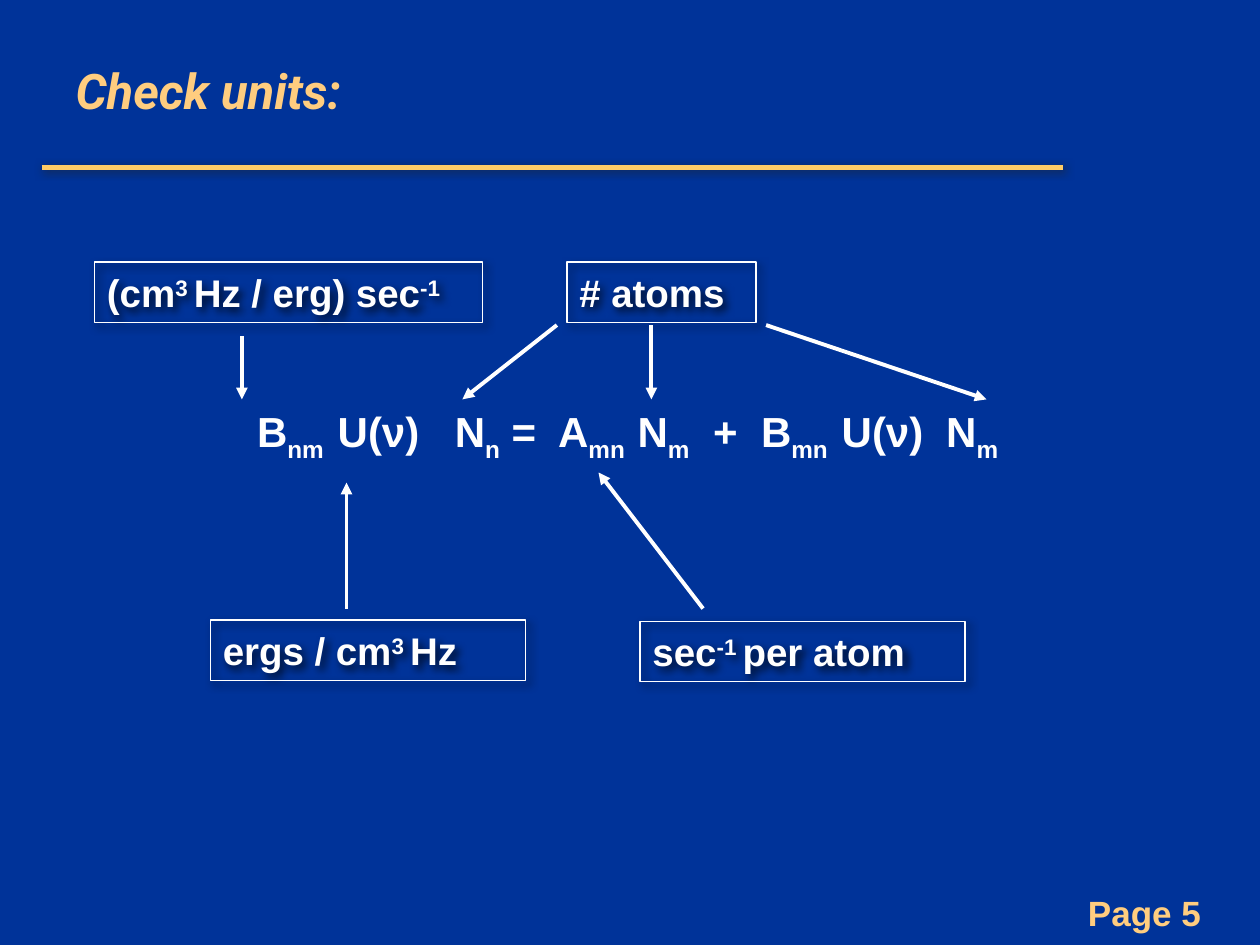
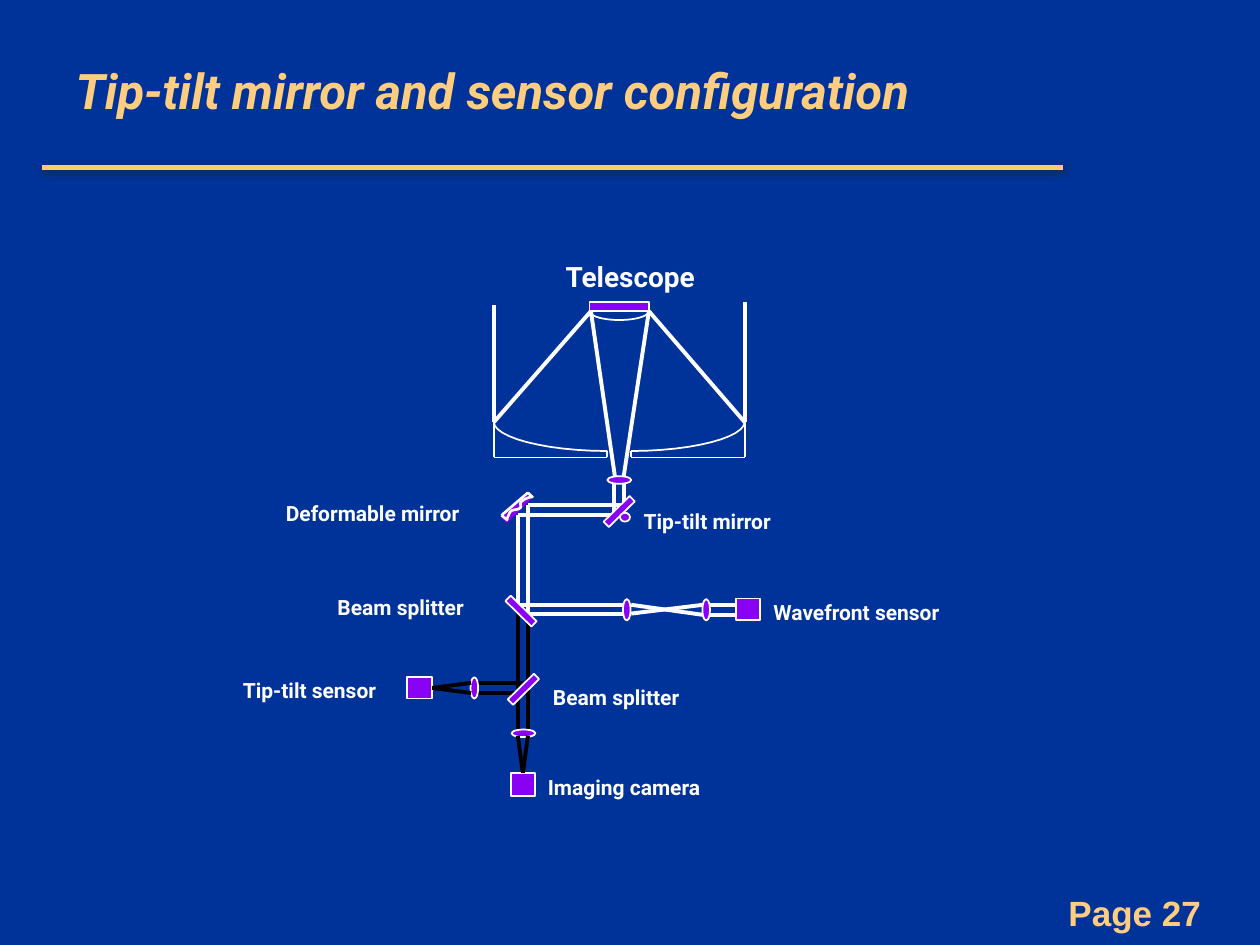
from itertools import pairwise

from lxml.etree import SubElement
from pptx import Presentation
from pptx.dml.color import RGBColor
from pptx.enum.shapes import MSO_CONNECTOR, MSO_SHAPE
from pptx.enum.text import MSO_ANCHOR, PP_ALIGN
from pptx.oxml.ns import qn
from pptx.util import Inches, Pt

COLUMNS, ROWS = 100, 75
COLORS = {
    "background": "003399",
    "rule": "FFCC66",
    "accent": "FFCD7F",
    "white": "FFFFFF",
    "black": "000000",
    "optic": "8901F3",
    "rule_shadow": "232323",
}
SUPERSCRIPT, SUBSCRIPT = 30000, -25000


def color(name):
    """Return the named colour."""
    return RGBColor.from_string(COLORS[name])


def bezier(start, first, second, end, steps=12):
    """Return points along a cubic curve."""
    def blend(a, b, c, d, t):
        """Mix four coordinates at position t."""
        s = 1 - t
        return s**3 * a + 3 * s**2 * t * b + 3 * s * t**2 * c + t**3 * d

    return [
        tuple(blend(*axis, step / steps) for axis in zip(start, first, second, end))
        for step in range(steps + 1)
    ]


class Deck:
    """Draws styled elements on the current slide, placed in grid units."""

    def __init__(self):
        """Start an empty presentation with a shared background."""
        self.presentation = Presentation()
        self.presentation.slide_width = Inches(10)
        self.presentation.slide_height = Inches(7.5)
        fill = self.presentation.slide_master.background.fill
        fill.solid()
        fill.fore_color.rgb = color("background")
        self.slide = None

    def place(self, *lengths):
        """Turn alternating columns and rows into slide lengths."""
        units = (
            self.presentation.slide_width / COLUMNS,
            self.presentation.slide_height / ROWS,
        )
        return [round(value * units[i % 2]) for i, value in enumerate(lengths)]

    def add_slide(self, title, page):
        """Add a slide with its title, rule and page number."""
        self.slide = self.presentation.slides.add_slide(
            self.presentation.slide_layouts[5]
        )
        shape = self.slide.shapes.title
        shape.left, shape.top, shape.width, shape.height = self.place(5, 0, 78.3, 14.2)
        shape.text_frame.vertical_anchor = MSO_ANCHOR.MIDDLE
        self.set_text(shape, title, 28, "Roboto", "accent", italic=True)
        rule = self.line((3.3, 13.3), (84.4, 13.3), "rule", 3)
        self.shadow(rule, "rule_shadow", 1.4)
        self.text((72.2, 70.3, 24.1, 4.3), f"Page {page}", 20, "Arial", "accent",
                  align=PP_ALIGN.RIGHT)

    def set_text(self, shape, text, size, font, ink="white", align=PP_ALIGN.LEFT,
                 italic=False, shift=SUPERSCRIPT, tabs=()):
        """Fill a shape with one paragraph; bars enclose shifted text."""
        shape.text_frame.word_wrap = True
        paragraph = shape.text_frame.paragraphs[0]
        if tabs:
            properties = paragraph._p.get_or_add_pPr()
            tab_list = SubElement(properties, qn("a:tabLst"))
            for position in tabs:
                SubElement(tab_list, qn("a:tab"), pos=str(self.place(position)[0]),
                           algn="l")
        for index, part in enumerate(text.split("|")):
            if part:
                run = paragraph.add_run()
                run.text = part
                if index % 2:
                    run._r.get_or_add_rPr().set("baseline", str(shift))
        paragraph.alignment = align
        paragraph.font.name = font
        paragraph.font.size = Pt(size)
        paragraph.font.bold = True
        paragraph.font.italic = italic
        paragraph.font.color.rgb = color(ink)

    def text(self, box, text, size, font, ink="white", **style):
        """Add a text box."""
        shape = self.slide.shapes.add_textbox(*self.place(*box))
        self.set_text(shape, text, size, font, ink, **style)
        return shape

    def shadow(self, shape, ink, distance):
        """Give a shape a soft shadow down to the right."""
        properties = shape._element.spPr
        effects = properties.find(qn("a:effectLst"))
        outer = SubElement(effects, qn("a:outerShdw"), blurRad=str(Pt(5)),
                           dist=str(Pt(distance)), dir="2700000", algn="tl",
                           rotWithShape="0")
        shade = SubElement(outer, qn("a:srgbClr"), val=COLORS[ink])
        SubElement(shade, qn("a:alpha"), val="75000")

    def line(self, start, end, ink="white", width=2.25, arrow=False):
        """Add a straight line, with an arrowhead at its end if asked."""
        connector = self.slide.shapes.add_connector(
            MSO_CONNECTOR.STRAIGHT, *self.place(*start, *end)
        )
        connector.line.color.rgb = color(ink)
        connector.line.width = Pt(width)
        properties = connector._element.spPr
        if arrow:
            SubElement(properties.find(qn("a:ln")), qn("a:tailEnd"), type="triangle")
        SubElement(properties, qn("a:effectLst"))
        return connector

    def polyline(self, points, ink="white", width=2.25):
        """Join successive points by lines."""
        for start, end in pairwise(points):
            self.line(start, end, ink, width)

    def finish(self, shape, fill="optic", width=1):
        """Set the fill and outline of a shape."""
        shape.shadow.inherit = False
        if fill:
            shape.fill.solid()
            shape.fill.fore_color.rgb = color(fill)
        else:
            shape.fill.background()
        if width:
            shape.line.color.rgb = color("white")
            shape.line.width = Pt(width)
        else:
            shape.line.fill.background()
        return shape

    def optic(self, center, size, kind=MSO_SHAPE.RECTANGLE, angle=0, fill="optic",
              width=1):
        """Add an optical part around its center."""
        corner = [middle - length / 2 for middle, length in zip(center, size)]
        shape = self.slide.shapes.add_shape(kind, *self.place(*corner, *size))
        shape.rotation = angle
        return self.finish(shape, fill, width)

    def curve(self, points, fill=None, width=1):
        """Add an open outline through the points."""
        first, *rest = [self.place(*point) for point in points]
        builder = self.slide.shapes.build_freeform(*first, scale=1.0)
        builder.add_line_segments(rest, close=False)
        return self.finish(builder.convert_to_shape(), fill, width)

    def unit_box(self, box, text):
        """Add an outlined box naming a unit."""
        shape = self.slide.shapes.add_shape(MSO_SHAPE.RECTANGLE, *self.place(*box))
        self.finish(shape, None, 0.75)
        self.shadow(shape, "black", 3)
        self.set_text(shape, text, 22, "Arial")


def build_units(deck):
    """Build the slide that checks the units of the rate equation."""
    deck.add_slide("Check units:", 5)
    equation = deck.text(
        (4.2, 31.7, 91.7, 9.2),
        "B|nm|\tU(ν)\tN|n|\t=\tA|mn|\tN|m|\t+\tB|mn|\tU(ν)\tN|m|",
        24, "Arial", shift=SUBSCRIPT,
        tabs=(6.4, 15.7, 20.2, 23.9, 30.2, 36.2, 40, 46.4, 54.7),
    )
    equation.text_frame.margin_left = deck.place(16.2)[0]
    for box, text in (
        ((7.5, 20.8, 30.8, 4.8), "(cm|3 |Hz / erg) sec|-1|"),
        ((45, 20.8, 15, 4.8), "# atoms"),
        ((16.7, 49.2, 25, 4.8), "ergs / cm|3 |Hz"),
        ((50.8, 49.3, 25.8, 4.8), "sec|-1 |per atom"),
    ):
        deck.unit_box(box, text)
    for start, end in (
        ((19.2, 26.7), (19.2, 31.7)),
        ((44.2, 25.8), (36.7, 31.7)),
        ((51.7, 25.8), (51.7, 31.7)),
        ((60.8, 25.8), (78.3, 31.7)),
        ((27.5, 48.3), (27.5, 38.3)),
        ((55.8, 48.3), (47.5, 37.5)),
    ):
        deck.line(start, end, arrow=True)


def draw_telescope(deck):
    """Draw the tube, both mirrors and the light between them."""
    for outer, inner in ((39.2, 48.2), (59.1, 50.1)):
        control = outer + 0.45 * (inner - outer)
        deck.curve(bezier((inner, 35.8), (control, 35.8), (outer, 34.7), (outer, 33.5)))
        deck.polyline([(outer, 33.5), (outer, 36.3), (inner, 36.3), (inner, 35.8)],
                      width=1)
    deck.optic((49.15, 24.7), (4.7, 1.4), MSO_SHAPE.OVAL, fill=None)
    deck.optic((49.15, 24.35), (4.7, 0.7))
    deck.polyline([(39.2, 24.2), (39.2, 33.5), (46.9, 24.7), (48.8, 37.8)])
    deck.polyline([(59.1, 24), (59.1, 33.5), (51.5, 24.7), (49.5, 37.8)])


def draw_deformable_mirror(deck):
    """Draw the mirror with a flexible face."""
    deck.optic((41.05, 40.3), (2.9, 0.6), angle=315.5, width=0)
    deck.polyline([(42.3, 39.5), (41.9, 39.1), (39.8, 40.9), (40.3, 41.3)], width=1.5)
    face = (
        bezier((42.3, 39.4), (41.9, 39.5), (41.6, 39.6), (41.4, 39.8))
        + bezier((41.4, 39.8), (41.2, 39.9), (41.4, 40.2), (41.3, 40.3))[1:]
        + bezier((41.3, 40.3), (41.1, 40.5), (40.7, 40.4), (40.5, 40.6))[1:]
        + bezier((40.5, 40.6), (40.4, 40.8), (40.3, 41), (40.2, 41.3))[1:]
    )
    deck.curve(face, "optic", 1.5)


def build_tip_tilt(deck):
    """Build the slide with the optical layout."""
    deck.add_slide("Tip-tilt mirror and sensor configuration", 27)
    draw_telescope(deck)
    for ink, points in (
        ("white", [(48.7, 38.4), (48.7, 40.9), (41.1, 40.9), (41.1, 48), (49.5, 48)]),
        ("white", [(49.5, 38.4), (49.5, 40.1), (41.9, 40.1), (41.9, 48.7), (49.5, 48.7)]),
        ("white", [(50.1, 48), (55.8, 48.8), (58.4, 48.8)]),
        ("white", [(50.1, 48.7), (55.8, 48), (58.4, 48)]),
        ("black", [(41.1, 48), (41.1, 55), (37.4, 55)]),
        ("black", [(41.9, 48.8), (41.9, 54.2), (37.4, 54.2)]),
        ("black", [(41.1, 55), (41.1, 58.4)]),
        ("black", [(41.9, 54.2), (41.9, 58.4)]),
    ):
        deck.polyline(points, ink)
    for center in ((49.15, 38.1), (41.55, 58.2)):
        deck.optic(center, (1.9, 0.6), MSO_SHAPE.OVAL)
    for center in ((49.75, 48.4), (56.05, 48.4), (37.65, 54.6)):
        deck.optic(center, (0.6, 1.7), MSO_SHAPE.OVAL)
    for center, angle in (
        ((41.35, 48.5), 44.5),
        ((41.55, 54.7), 315.5),
        ((49.15, 40.6), 315.5),
    ):
        deck.optic(center, (2.9, 0.6), angle=angle)
    deck.optic((49.6, 41.05), (0.8, 0.7), MSO_SHAPE.OVAL)
    draw_deformable_mirror(deck)
    deck.optic((59.35, 48.35), (1.9, 1.7))
    for center, size, side, ends in (
        ((33.3, 54.6), (2, 1.7), 3, ((37.4, 55), (37.4, 54.2))),
        ((41.5, 62.25), (1.9, 1.8), 0, ((41.9, 58.4), (41.1, 58.4))),
    ):
        detector = deck.optic(center, size)
        for end in ends:
            deck.line(center, end, "black").begin_connect(detector, side)
    deck.text((43.9, 20.1, 13.1, 3.7), "Telescope", 16, "Roboto")
    for left, top, width, label in (
        (50.1, 39.9, 13.5, "Tip-tilt mirror"),
        (21.7, 39.2, 17.6, "Deformable mirror"),
        (25.8, 46.7, 13.2, "Beam splitter"),
        (42.9, 53.8, 13.2, "Beam splitter"),
        (60.4, 47.1, 16.8, "Wavefront sensor"),
        (42.5, 61, 18.3, "Imaging camera"),
        (18.3, 53.3, 13.7, "Tip-tilt sensor"),
    ):
        deck.text((left, top, width, 3), label, 12, "Roboto")


def main():
    """Build and save both slides."""
    deck = Deck()
    build_units(deck)
    build_tip_tilt(deck)
    deck.presentation.save("out.pptx")


if __name__ == "__main__":
    main()
